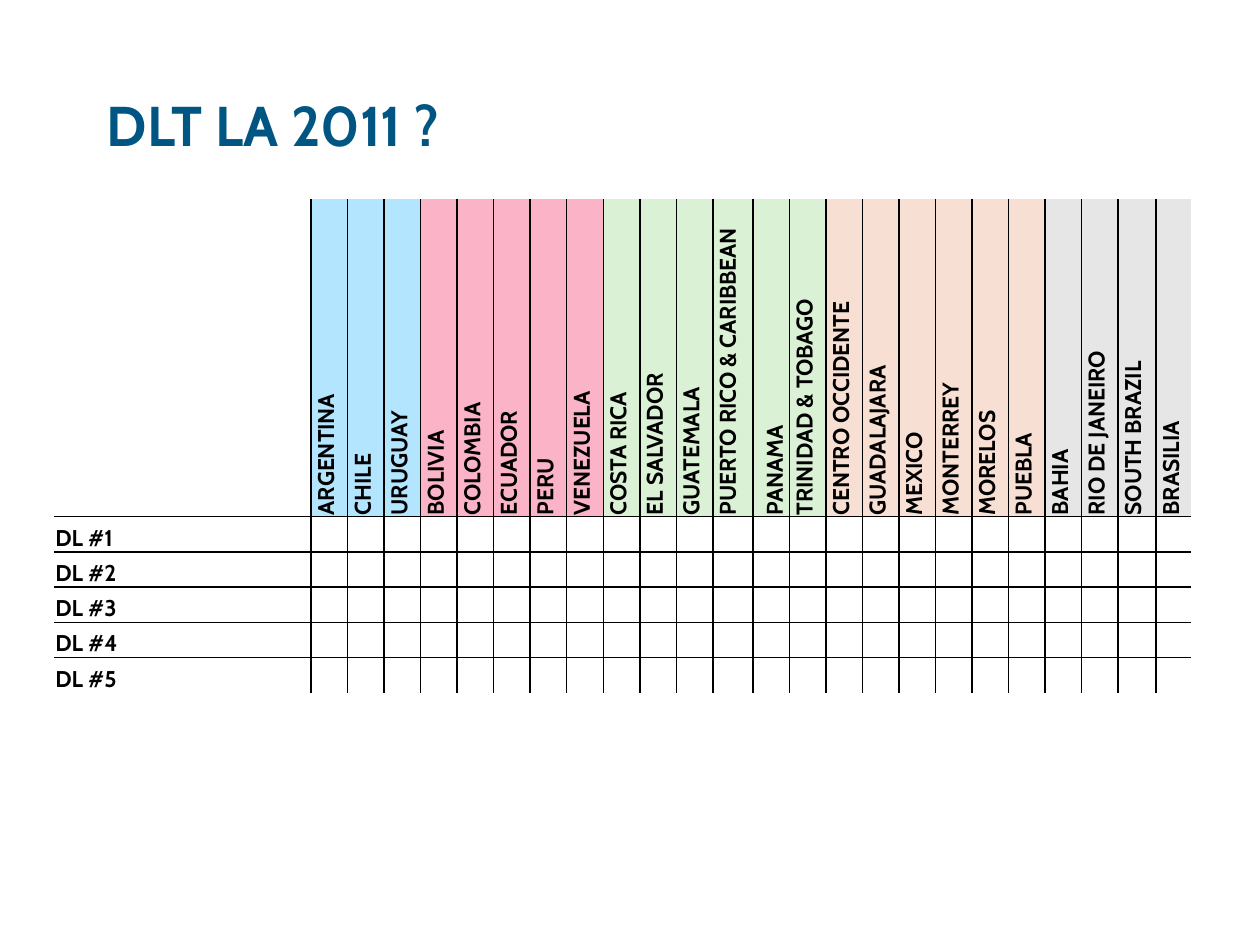
from lxml.etree import SubElement
from pptx import Presentation
from pptx.dml.color import RGBColor
from pptx.enum.text import MSO_ANCHOR
from pptx.oxml.ns import qn
from pptx.util import Inches, Pt

COLORS = {
    "title": "005582", "ink": "000000", "blue": "B3E5FF", "pink": "FBB3C7",
    "green": "DBF1D5", "peach": "F8DFD4", "gray": "E6E6E6",
}
FONT = "Cabin"
GRID = 0.1  # inches: the slide is 100 columns by 75 rows

REGIONS = [
    ("blue", ["ARGENTINA", "CHILE", "URUGUAY"]),
    ("pink", ["BOLIVIA", "COLOMBIA", "ECUADOR", "PERU", "VENEZUELA"]),
    ("green", ["COSTA RICA", "EL SALVADOR", "GUATEMALA",
               "PUERTO RICO & CARIBBEAN", "PANAMA", "TRINIDAD & TOBAGO"]),
    ("peach", ["CENTRO OCCIDENTE", "GUADALAJARA", "MEXICO", "MONTERREY",
               "MORELOS", "PUEBLA"]),
    ("gray", ["BAHIA", "RIO DE JANEIRO", "SOUTH BRAZIL", "BRASILIA"]),
]
DISTRICTS = [(name, color) for color, names in REGIONS for name in names]
LEADERS = [f"DL #{number}" for number in range(1, 6)]
WIDE_COLUMNS = {"PUERTO RICO & CARIBBEAN": 3.2, "SOUTH BRAZIL": 3, "RIO DE JANEIRO": 2.9,
                "BRASILIA": 2.8}


def units(count):
    return Inches(round(count * GRID, 3))


def add_text(para, text, size=13, font=FONT, color="ink", bold=True):
    span = para.add_run()
    span.text = text
    span.font.size = Pt(size)
    span.font.name = font
    span.font.bold = bold
    span.font.color.rgb = RGBColor.from_string(COLORS[color])


class SlideBuilder:
    def __init__(self, deck):
        self.page = deck.slides.add_slide(deck.slide_layouts[6])

    def title(self, text, left, top, width, height):
        box = self.page.shapes.add_textbox(*map(units, (left, top, width, height)))
        box.text_frame.word_wrap = True
        add_text(box.text_frame.paragraphs[0], text, size=32, color="title")

    def table(self, left, top, widths, heights):
        frame = self.page.shapes.add_table(
            len(heights), len(widths), units(left), units(top),
            units(sum(widths)), units(sum(heights)))
        table = frame.table
        table.first_row = table.horz_banding = False
        for column, width in zip(table.columns, widths):
            column.width = units(width)
        for row, height in zip(table.rows, heights):
            row.height = units(height)
        return table

    def cell(self, table, row, column, text="", fill=None, upright=False):
        cell = table.cell(row, column)
        cell.margin_left = cell.margin_right = cell.margin_top = Inches(0.01)
        cell.margin_bottom = 0
        cell.vertical_anchor = MSO_ANCHOR.BOTTOM
        if upright:
            cell._tc.tcPr.set("vert", "vert270")
        # Inner lines only: the outer edge of the table stays open
        self.borders(cell, {
            "lnL": column > 0, "lnR": column < len(table.columns) - 1,
            "lnT": row > 0, "lnB": row < len(table.rows) - 1})
        if fill:
            cell.fill.solid()
            cell.fill.fore_color.rgb = RGBColor.from_string(COLORS[fill])
        else:
            cell.fill.background()
        para = cell.text_frame.paragraphs[0]
        if text:
            add_text(para, text)
        else:
            SubElement(para._p, qn("a:endParaRPr"), sz="1300")
        return para

    def borders(self, cell, sides):
        for tag, drawn in sides.items():
            line = SubElement(cell._tc.tcPr, qn(f"a:{tag}"), w=str(Pt(1)))
            if drawn:
                paint = SubElement(line, qn("a:solidFill"))
                SubElement(paint, qn("a:srgbClr"), val=COLORS["ink"])
            else:
                SubElement(line, qn("a:noFill"))


def main():
    deck = Presentation()
    deck.slide_width, deck.slide_height = units(100), units(75)
    builder = SlideBuilder(deck)
    builder.title("DLT LA 2011 ?", 7.5, 6.7, 85, 12.5)

    # Matrix of leaders by district
    widths = [20.4] + [WIDE_COLUMNS.get(name, 2.9) for name, _ in DISTRICTS]
    table = builder.table(4.3, 15.8, widths, [25.2] + [2.8] * len(LEADERS))

    # District headings
    builder.cell(table, 0, 0)
    for column, (name, color) in enumerate(DISTRICTS, 1):
        para = builder.cell(table, 0, column, name, fill=color, upright=True)
        if name == "PANAMA":
            add_text(para, " ", size=18, font="Arial", bold=False)

    # Leader rows
    for row, leader in enumerate(LEADERS, 1):
        builder.cell(table, row, 0, leader)
        for column in range(1, len(widths)):
            builder.cell(table, row, column)

    deck.save("out.pptx")


if __name__ == "__main__":
    main()
